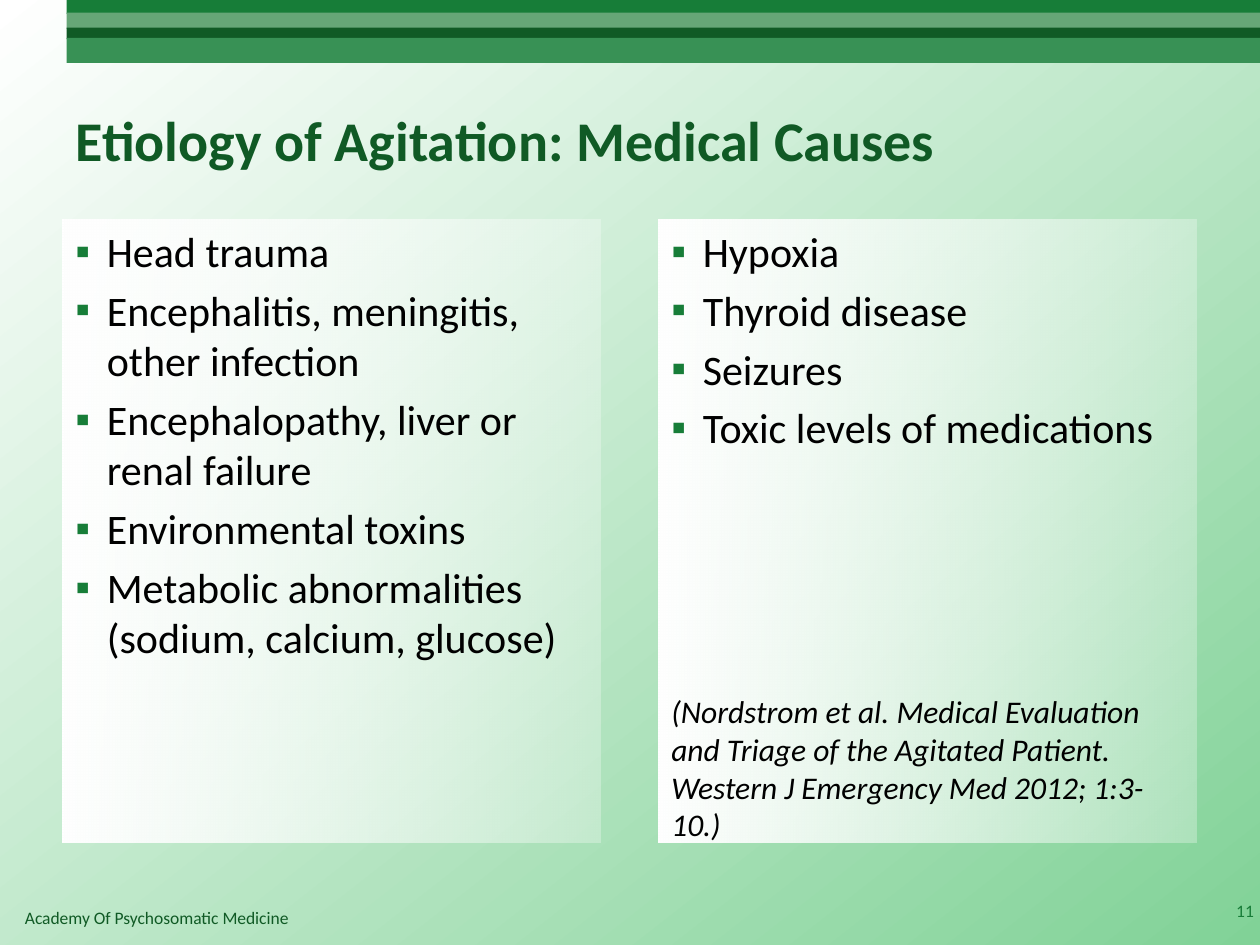
from lxml import etree
from pptx import Presentation
from pptx.dml.color import RGBColor
from pptx.enum.shapes import MSO_SHAPE
from pptx.enum.text import MSO_ANCHOR, PP_ALIGN
from pptx.oxml.ns import qn
from pptx.util import Inches, Pt

RECT = MSO_SHAPE.RECTANGLE
TOP, MID = MSO_ANCHOR.TOP, MSO_ANCHOR.MIDDLE
LEFT, RIGHT = PP_ALIGN.LEFT, PP_ALIGN.RIGHT

THEME = {
    "font": "Calibri",
    "dark": "105A25", "green": "177D38", "pale": "66A677", "mid": "389155",
    "white": "FFFFFF", "black": "000000", "wash": "81D297",
    "title": 32, "body": 24, "cite": 18, "small": 10,
}


def rgb(name):
    return RGBColor.from_string(THEME[name])


def write(frame, text, size="body", color="black", bold=False, italic=False,
          align=LEFT, anchor=TOP, before=0, bullet=False):
    """Fill the frame's first paragraph, or add one if it already has text."""
    frame.word_wrap = True
    frame.vertical_anchor = anchor
    para = frame.add_paragraph() if frame.text else frame.paragraphs[0]
    para.alignment = align
    para.space_before = Pt(before)
    run = para.add_run()
    run.text = text
    font = run.font
    font.name, font.size = THEME["font"], Pt(THEME[size])
    font.bold, font.italic = bold, italic
    font.color.rgb = rgb(color)
    if bullet:
        props = para._p.get_or_add_pPr()
        props.set("marL", str(Inches(0.25)))
        props.set("indent", str(-Inches(0.25)))
        tint = etree.SubElement(props, qn("a:buClr"))
        etree.SubElement(tint, qn("a:srgbClr"), val=THEME["green"])
        etree.SubElement(props, qn("a:buFont"), typeface="Arial")
        etree.SubElement(props, qn("a:buChar"), char="▪")


deck = Presentation()
deck.slide_width, deck.slide_height = Inches(10), Inches(7.5)
slide = deck.slides.add_slide(deck.slide_layouts[5])
shapes = slide.shapes

# Background
back = slide.background.fill
back.gradient()
back.gradient_angle = 308
for stop, name in zip(back.gradient_stops, ("white", "wash")):
    stop.color.rgb = rgb(name)

# Header bands
bands = [(0, 0.11, "green"), (0.1, 0.13, "pale"),
         (0.22, 0.09, "dark"), (0.3, 0.2, "mid")]
for top, height, name in bands:
    band = shapes.add_shape(RECT, Inches(0.53), Inches(top),
                            Inches(9.47), Inches(height))
    band.shadow.inherit = False
    band.fill.solid()
    band.fill.fore_color.rgb = rgb(name)
    band.line.fill.background()

# Title
title = shapes.title
title.left, title.top = Inches(0.5), Inches(0.42)
title.width, title.height = Inches(9), Inches(1.37)
write(title.text_frame, "Etiology of Agitation: Medical Causes",
      size="title", color="dark", bold=True, anchor=MID)

# Panels of causes
causes = [
    (0.5, ["Head trauma",
           "Encephalitis, meningitis, other infection",
           "Encephalopathy, liver or renal failure",
           "Environmental toxins",
           "Metabolic abnormalities (sodium, calcium, glucose)"]),
    (5.23, ["Hypoxia", "Thyroid disease", "Seizures",
            "Toxic levels of medications"]),
]
for left, items in causes:
    panel = shapes.add_shape(RECT, Inches(left), Inches(1.74),
                             Inches(4.27), Inches(4.95))
    panel.shadow.inherit = False
    panel.line.fill.background()
    panel.fill.gradient()
    panel.fill.gradient_angle = 0
    for stop in panel.fill.gradient_stops:
        stop.color.rgb = rgb("white")
    fade = panel._element.spPr.findall(".//" + qn("a:srgbClr"))[-1]
    etree.SubElement(fade, qn("a:alpha"), val="30000")
    for spot, item in enumerate(items):
        write(panel.text_frame, item, before=4.8 if spot else 1, bullet=True)

# The citation sits at the foot of the right panel
write(panel.text_frame,
      "(Nordstrom et al. Medical Evaluation and Triage of the Agitated "
      "Patient. Western J Emergency Med 2012; 1:3-10.)",
      size="cite", italic=True, before=137)

# Footer and slide number
foot = shapes.add_textbox(Inches(0.1), Inches(7.15), Inches(6.94), Inches(0.27))
write(foot.text_frame, "Academy Of Psychosomatic Medicine",
      size="small", color="dark")
number = shapes.add_textbox(Inches(9.65), Inches(7.03), Inches(0.4), Inches(0.4))
write(number.text_frame, "11", size="small", color="green",
      align=RIGHT, anchor=MID)

deck.save("out.pptx")
